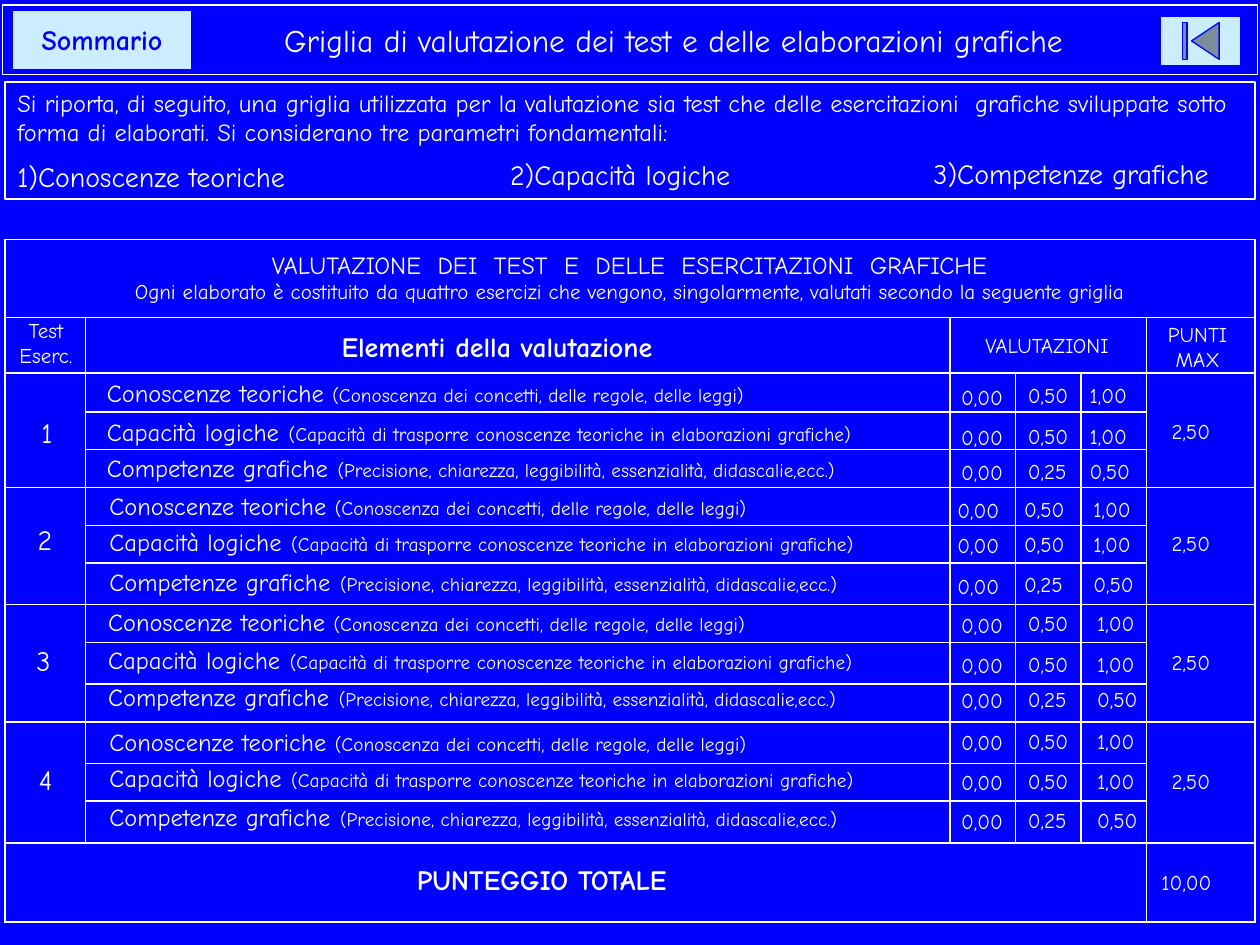
from lxml import etree
from pptx import Presentation
from pptx.dml.color import RGBColor
from pptx.enum.shapes import MSO_SHAPE
from pptx.enum.text import MSO_ANCHOR, PP_ALIGN
from pptx.oxml.ns import qn
from pptx.util import Inches, Pt

BLUE = RGBColor(0x00, 0x00, 0xFF)
WHITE = RGBColor(0xFF, 0xFF, 0xFF)
PALE_BLUE = RGBColor(0xCC, 0xEC, 0xFF)
FONT = "Comic Neue"
LEFT, CENTER = PP_ALIGN.LEFT, PP_ALIGN.CENTER
TOP, MIDDLE = MSO_ANCHOR.TOP, MSO_ANCHOR.MIDDLE
RECTANGLE = MSO_SHAPE.RECTANGLE
BUTTON_BLANK = MSO_SHAPE.ACTION_BUTTON_CUSTOM
BUTTON_BEGINNING = MSO_SHAPE.ACTION_BUTTON_BEGINNING

prs = Presentation()
prs.slide_width, prs.slide_height = Inches(10), Inches(7.5)
slide = prs.slides.add_slide(prs.slide_layouts[6])
slide.background.fill.solid()
slide.background.fill.fore_color.rgb = BLUE


def write(frame, runs, align=LEFT, color=WHITE, bold=False, anchor=TOP):
    """Fill the first paragraph with (text, size) runs."""
    frame.word_wrap = True
    frame.vertical_anchor = anchor
    paragraph = frame.paragraphs[0]
    paragraph.alignment = align
    for text, size in runs:
        run = paragraph.add_run()
        run.text = text
        run.font.name = FONT
        run.font.size = Pt(size)
        run.font.bold = bold
        run.font.color.rgb = color


def add_box(left, top, width, height, runs=(), preset=None, fill=None,
            line=WHITE, line_width=1, **style):
    """Add a text box, or a preset shape when one is named."""
    place = [Inches(v) for v in (left, top, width, height)]
    if preset is None:
        box = slide.shapes.add_textbox(*place)
    else:
        box = slide.shapes.add_shape(preset, *place)
        box.shadow.inherit = False
        box.line.color.rgb = line
        box.line.width = Pt(line_width)
        if fill is None:
            box.fill.background()
        else:
            box.fill.solid()
            box.fill.fore_color.rgb = fill
    write(box.text_frame, runs, **style)
    return box


# Title bar, its text centred between the two buttons
title = add_box(0.02, 0.04, 9.96, 0.55,
                [("Griglia di valutazione dei test e delle elaborazioni grafiche", 18)],
                preset=RECTANGLE, line_width=0.75, align=CENTER, anchor=MIDDLE)
title.text_frame.margin_left = Inches(0.79)

# Evaluation grid
column_widths = [0.64, 6.86, 0.52, 0.52, 0.52, 0.86]
row_heights = [0.62, 0.44, 0.31, 0.3, 0.3, 0.3, 0.3, 0.33] + [0.3, 0.33] * 3 + [0.63]
grid = slide.shapes.add_table(len(row_heights), len(column_widths), Inches(0.04),
                              Inches(1.9), Inches(9.92), Inches(5.41)).table
grid.first_row = grid.horz_banding = False
for column, width in zip(grid.columns, column_widths):
    column.width = Inches(width)
for row, height in zip(grid.rows, row_heights):
    row.height = Inches(height)

for cell in grid.iter_cells():
    cell.margin_top = cell.margin_bottom = Inches(0.02)
    for side in ("a:lnL", "a:lnR", "a:lnT", "a:lnB"):
        border = etree.SubElement(cell._tc.get_or_add_tcPr(), qn(side), w=str(Pt(1)))
        solid = etree.SubElement(border, qn("a:solidFill"))
        etree.SubElement(solid, qn("a:srgbClr"), val=str(WHITE))
    cell.fill.background()
    # Small end mark, so that empty cells do not stretch the rows
    etree.SubElement(cell.text_frame.paragraphs[0]._p, qn("a:endParaRPr"), sz="800")

merges = [(0, 0, 0, 5), (1, 2, 1, 4), (14, 0, 14, 4)]
for first in range(2, 14, 3):
    merges += [(first, column, first + 2, column) for column in (0, 5)]
for top, left, bottom, right in merges:
    grid.cell(top, left).merge(grid.cell(bottom, right))

heading = grid.cell(0, 0)
heading.vertical_anchor = MIDDLE
for index, (text, size) in enumerate([
    ("VALUTAZIONE  DEI  TEST  E  DELLE  ESERCITAZIONI  GRAFICHE", 14),
    ("Ogni elaborato è costituito da quattro esercizi che vengono, singolarmente, "
     "valutati secondo la seguente griglia", 12),
]):
    frame = heading.text_frame
    paragraph = frame.add_paragraph() if index else frame.paragraphs[0]
    paragraph.alignment = CENTER
    run = paragraph.add_run()
    run.text = text
    run.font.name = FONT
    run.font.size = Pt(size)
    run.font.color.rgb = WHITE

# Introduction and the three parameters
add_box(0.04, 0.65, 9.92, 0.93,
        [("Si riporta, di seguito, una griglia utilizzata per la valutazione sia test che "
          "delle esercitazioni  grafiche sviluppate sotto forma di elaborati. Si "
          "considerano tre parametri fondamentali:", 14)], preset=RECTANGLE)
for left, top, width, parameter in [
    (0.04, 1.22, 2.6, "1)Conoscenze teoriche"),
    (3.95, 1.2, 2.1, "2)Capacità logiche"),
    (7.31, 1.19, 2.65, "3)Competenze grafiche"),
]:
    add_box(left, top, width, 0.37, [(parameter, 16)])

# Column headings and total row
add_box(0, 2.47, 0.73, 0.5, [("Test Eserc.", 12)], align=CENTER)
add_box(2.41, 2.57, 3.07, 0.37, [("Elementi della valutazione", 16)],
        align=CENTER, bold=True)
add_box(7.54, 2.59, 1.54, 0.3, [("VALUTAZIONI", 12)], align=CENTER)
add_box(9.06, 2.5, 0.89, 0.5, [("PUNTI MAX", 12)], align=CENTER)
add_box(2.72, 6.8, 3.16, 0.37, [("PUNTEGGIO TOTALE", 16)], align=CENTER, bold=True)
add_box(9.12, 6.85, 0.66, 0.3, [("10,00", 12)])

# Each exercise repeats the same criteria and scores
criteria = [
    ([("Conoscenze teoriche ", 14),
      ("(Conoscenza dei concetti, delle regole, delle leggi)", 11)],
     ("0,00", "0,50", "1,00")),
    ([("Capacità logiche", 14), (" ", 16),
      ("(Capacità di trasporre conoscenze teoriche in elaborazioni grafiche)", 11)],
     ("0,00", "0,50", "1,00")),
    ([("Competenze grafiche", 14), (" ", 16),
      ("(Precisione, chiarezza, leggibilità, essenzialità, didascalie,ecc.)", 11)],
     ("0,00", "0,25", "0,50")),
]
# Number position, criterion left and tops, score lefts and tops, maximum top
exercises = [
    ((0.23, 3.25), 0.75, (2.95, 3.23, 3.52), (7.53, 8.06, 8.55), (3, 3.32, 3.6), 3.27),
    ((0.2, 4.1), 0.77, (3.85, 4.11, 4.42), (7.5, 8.03, 8.58), (3.9, 4.18, 4.5), 4.16),
    ((0.19, 5.06), 0.76, (4.77, 5.04, 5.34), (7.53, 8.06, 8.61), (4.81, 5.13, 5.41), 5.11),
    ((0.21, 6), 0.77, (5.72, 5.98, 6.29), (7.53, 8.06, 8.61), (5.74, 6.06, 6.37), 6.05),
]
for number, (number_at, criterion_left, criterion_tops, score_lefts, score_tops,
             maximum_top) in enumerate(exercises, 1):
    add_box(*number_at, 0.33, 0.37, [(str(number), 16)])
    for (runs, scores), criterion_top, score_top in zip(criteria, criterion_tops, score_tops):
        height = 0.33 if len(runs) == 2 else 0.37
        add_box(criterion_left, criterion_top, 6.7, height, runs)
        for score, left, width, lift in zip(scores, score_lefts, (0.62, 0.62, 0.56),
                                            (0, 0.01, 0.01)):
            add_box(left, score_top - lift, width, 0.3, [(score, 12)])
    add_box(9.2, maximum_top, 0.66, 0.3, [("2,50", 12)])

# Navigation buttons
add_box(9.21, 0.13, 0.64, 0.39, preset=BUTTON_BEGINNING, fill=PALE_BLUE,
        line=BLUE, line_width=0)
add_box(0.1, 0.08, 1.42, 0.47, [("Sommario", 16)], preset=BUTTON_BLANK, fill=PALE_BLUE,
        line=BLUE, line_width=0, align=CENTER, color=BLUE, bold=True, anchor=MIDDLE)

prs.save("out.pptx")
